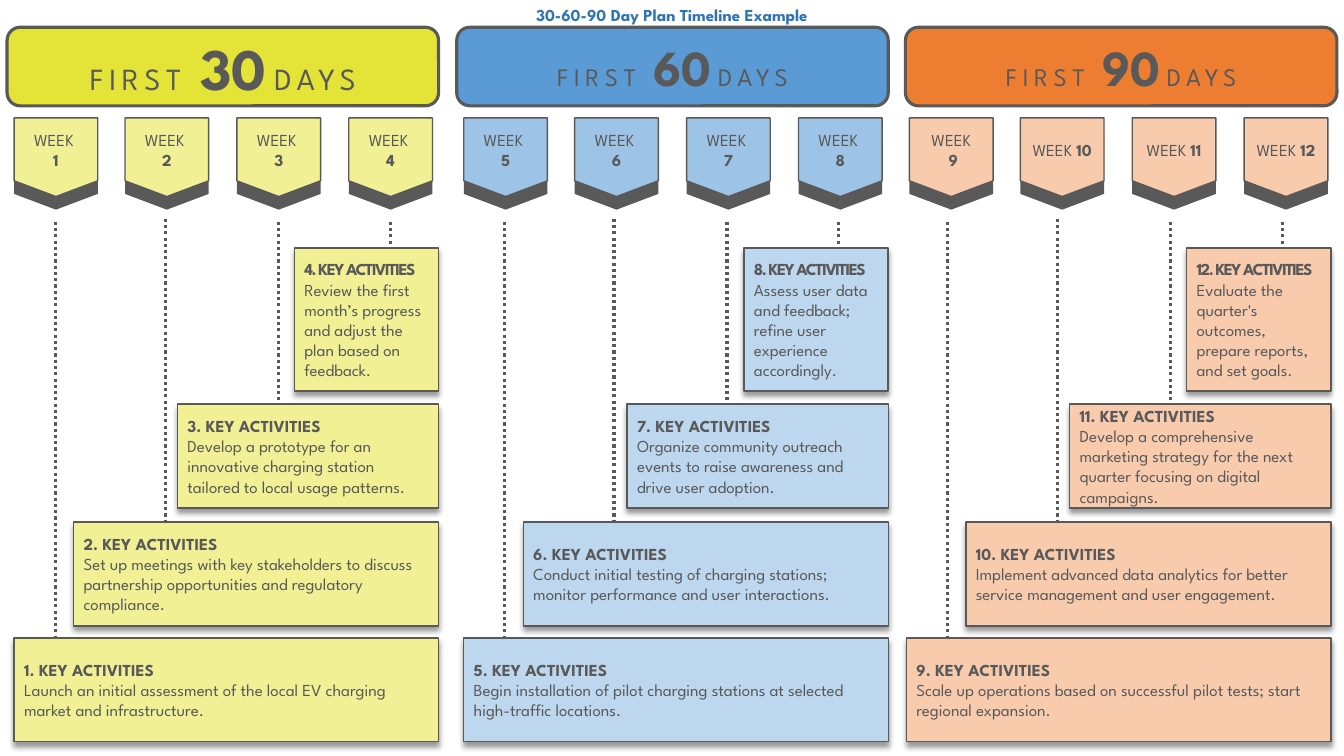
"""Build a 30-60-90 day plan timeline slide."""
import copy

import lxml.etree
import pptx
import pptx.dml.color
import pptx.enum.dml
import pptx.enum.shapes
import pptx.enum.text
import pptx.oxml
import pptx.oxml.ns
import pptx.util

EMU_PER_PX = 9144
FONT = "League Spartan"
GRAY = "595959"
SHAPES = pptx.enum.shapes.MSO_SHAPE
ALIGN = pptx.enum.text.PP_ALIGN
WEEK_OFFSETS = (0, 110, 221, 332)
STEM_OFFSETS = (0, 109, 221, 332)
STEM_SPANS = ((220, 649), (217, 606), (220, 489), (220, 364))
CARD_ROWS = ((633, 421, 103), (518, 362, 103), (401, 259, 103), (246, 143, 142))

PHASES = (
    {
        "days": "30", "first_week": 1, "sizes": (22, 42),
        "header_left": 7, "week_left": 14, "stem_left": 55, "card_right": 435,
        "header_fill": "E4E438", "week_fill": "F2F094", "card_fill": "F2F094",
        "week_labels": ("WEEK \v",) * 4,
        "activities": (
            "Launch an initial assessment of the local EV charging market and infrastructure.",
            "Set up meetings with key stakeholders to discuss partnership opportunities and regulatory compliance.",
            "Develop a prototype for an innovative charging station tailored to local usage patterns.",
            "Review the first month’s progress and adjust the plan based on feedback.",
        ),
    },
    {
        "days": "60", "first_week": 5, "sizes": (18, 36),
        "header_left": 453, "week_left": 460, "stem_left": 500, "card_right": 881,
        "header_fill": "5B9BD5", "week_fill": "9DC3E6", "card_fill": "BDD7EE",
        "week_labels": ("WEEK \v",) * 4,
        "activities": (
            "Begin installation of pilot charging stations at selected high-traffic locations.",
            "Conduct initial testing of charging stations; monitor performance and user interactions.",
            "Organize community outreach events to raise awareness and drive user adoption.",
            "Assess user data and feedback; refine user experience accordingly.",
        ),
    },
    {
        "days": "90", "first_week": 9, "sizes": (18, 36),
        "header_left": 898, "week_left": 902, "stem_left": 940, "card_right": 1320,
        "header_fill": "ED7D31", "week_fill": "F8CBAD", "card_fill": "F8CBAD",
        "week_labels": ("WEEK\v ", "WEEK ", "WEEK ", "WEEK "),
        "activities": (
            "Scale up operations based on successful pilot tests; start regional expansion.",
            "Implement advanced data analytics for better service management and user engagement.",
            "Develop a comprehensive marketing strategy for the next quarter focusing on digital campaigns.",
            "Evaluate the quarter's outcomes, prepare reports, and set goals.",
        ),
    },
)


def px(*lengths):
    """Turn pixel lengths into EMU."""
    return [pptx.util.Emu(length * EMU_PER_PX) for length in lengths]


def rgb(value):
    """Turn a hex string into a colour."""
    return pptx.dml.color.RGBColor.from_string(value)


def drawing_xml(xml):
    """Parse a fragment in the drawing namespace."""
    head, rest = xml.split(">", 1) if not xml.endswith("/>") else (xml[:-2], "")
    namespace = pptx.oxml.ns.nsdecls("a")
    return pptx.oxml.parse_xml(f"{head} {namespace}>{rest}" if rest else f"{head} {namespace}/>")


def add_text(paragraph, text, size=12, color=GRAY, bold=False, spacing=0, outline=None):
    """Add formatted text, with a line break at each vertical tab."""
    for index, part in enumerate(text.split("\v")):
        if index:
            paragraph.add_line_break()
            paragraph._p[-1].append(copy.deepcopy(run._r.rPr))
            if not part:
                continue
        run = paragraph.add_run()
        run.text = part
        run.font.name = FONT
        run.font.size = pptx.util.Pt(size)
        run.font.bold = bold
        run.font.color.rgb = rgb(color)
        properties = run._r.get_or_add_rPr()
        properties.set("spc", str(spacing * 100))
        if outline:
            properties.insert(0, drawing_xml(
                f'<a:ln w="19050"><a:solidFill><a:srgbClr val="{outline}"/></a:solidFill></a:ln>'))


def add_box(shapes, kind, bounds, fill, line_width=0, align=ALIGN.CENTER):
    """Add a filled preset shape and return it with its first paragraph."""
    shape = shapes.add_shape(kind, *px(*bounds))
    shape.shadow.inherit = False
    shape.fill.solid()
    shape.fill.fore_color.rgb = rgb(fill)
    if line_width:
        shape.line.color.rgb = rgb(GRAY)
        shape.line.width = pptx.util.Pt(line_width)
    else:
        shape.line.fill.background()
    shape.text_frame.word_wrap = True
    shape.text_frame.vertical_anchor = pptx.enum.text.MSO_ANCHOR.MIDDLE
    paragraph = shape.text_frame.paragraphs[0]
    paragraph.alignment = align
    return shape, paragraph


def add_title(slide):
    """Place the slide title along the top edge."""
    title = slide.shapes.title
    title.left, title.top, title.width, title.height = px(0, 0, 1333, 30)
    title.text_frame.auto_size = pptx.enum.text.MSO_AUTO_SIZE.NONE
    title.text_frame.vertical_anchor = pptx.enum.text.MSO_ANCHOR.MIDDLE
    paragraph = title.text_frame.paragraphs[0]
    paragraph.alignment = ALIGN.CENTER
    add_text(paragraph, "30-60-90 Day Plan Timeline Example", color="2E75B6", bold=True)


def add_header(slide, phase):
    """Add the rounded banner of a phase."""
    small, large = phase["sizes"]
    paragraph = add_box(slide.shapes, SHAPES.ROUNDED_RECTANGLE,
                        (phase["header_left"], 27, 428, 78), phase["header_fill"], 2.25)[1]
    add_text(paragraph, "FIRST ", size=small, spacing=4)
    add_text(paragraph, phase["days"], size=large, bold=True, outline="FFFFFF")
    add_text(paragraph, " ", size=small)
    add_text(paragraph, "DAYS", size=small, spacing=4)


def add_week(slide, left, label, number, fill):
    """Add a week marker with its dark lower edge."""
    shapes = slide.shapes.add_group_shape().shapes
    kind = SHAPES.FLOWCHART_OFFPAGE_CONNECTOR
    add_box(shapes, kind, (left, 130, 83, 78), GRAY)
    paragraph = add_box(shapes, kind, (left, 117, 83, 78), fill, 1)[1]
    add_text(paragraph, label)
    add_text(paragraph, str(number), bold=True)


def add_stem(slide, x, top, bottom):
    """Add a dotted vertical line from a week down to its card."""
    stem = slide.shapes.add_connector(
        pptx.enum.shapes.MSO_CONNECTOR.STRAIGHT, *px(x, top, x, bottom))
    stem.line.color.rgb = rgb(GRAY)
    stem.line.width = pptx.util.Pt(2.25)
    stem.line.dash_style = pptx.enum.dml.MSO_LINE.ROUND_DOT
    stem._element.spPr.append(drawing_xml("<a:effectLst/>"))


def add_card(slide, bounds, number, activity, fill, spacing):
    """Add a shadowed card of key activities."""
    card, paragraph = add_box(slide.shapes, SHAPES.RECTANGLE, bounds, fill, 1, ALIGN.LEFT)
    effects = card._element.spPr.find(pptx.oxml.ns.qn("a:effectLst"))
    effects.append(drawing_xml(
        '<a:outerShdw blurRad="50800" dist="38100" dir="5400000" algn="t" rotWithShape="0">'
        '<a:srgbClr val="000000"><a:alpha val="40000"/></a:srgbClr></a:outerShdw>'))
    add_text(paragraph, f"{number}. KEY ACTIVITIES\v", bold=True, spacing=spacing)
    add_text(paragraph, activity)


def add_phase(slide, phase):
    """Add the banner, weeks, stems and cards of a phase."""
    add_header(slide, phase)
    for index, activity in enumerate(phase["activities"]):
        number = phase["first_week"] + index
        add_week(slide, phase["week_left"] + WEEK_OFFSETS[index],
                 phase["week_labels"][index], number, phase["week_fill"])
        add_stem(slide, phase["stem_left"] + STEM_OFFSETS[index], *STEM_SPANS[index])
        top, width, height = CARD_ROWS[index]
        add_card(slide, (phase["card_right"] - width, top, width, height),
                 number, activity, phase["card_fill"], -1 if index == 3 else 0)


def main():
    """Create and save the presentation."""
    presentation = pptx.Presentation()
    presentation.slide_width, presentation.slide_height = px(1333, 750)
    slide = presentation.slides.add_slide(presentation.slide_layouts[5])
    add_title(slide)
    for phase in PHASES:
        add_phase(slide, phase)
    presentation.save("out.pptx")


if __name__ == "__main__":
    main()
